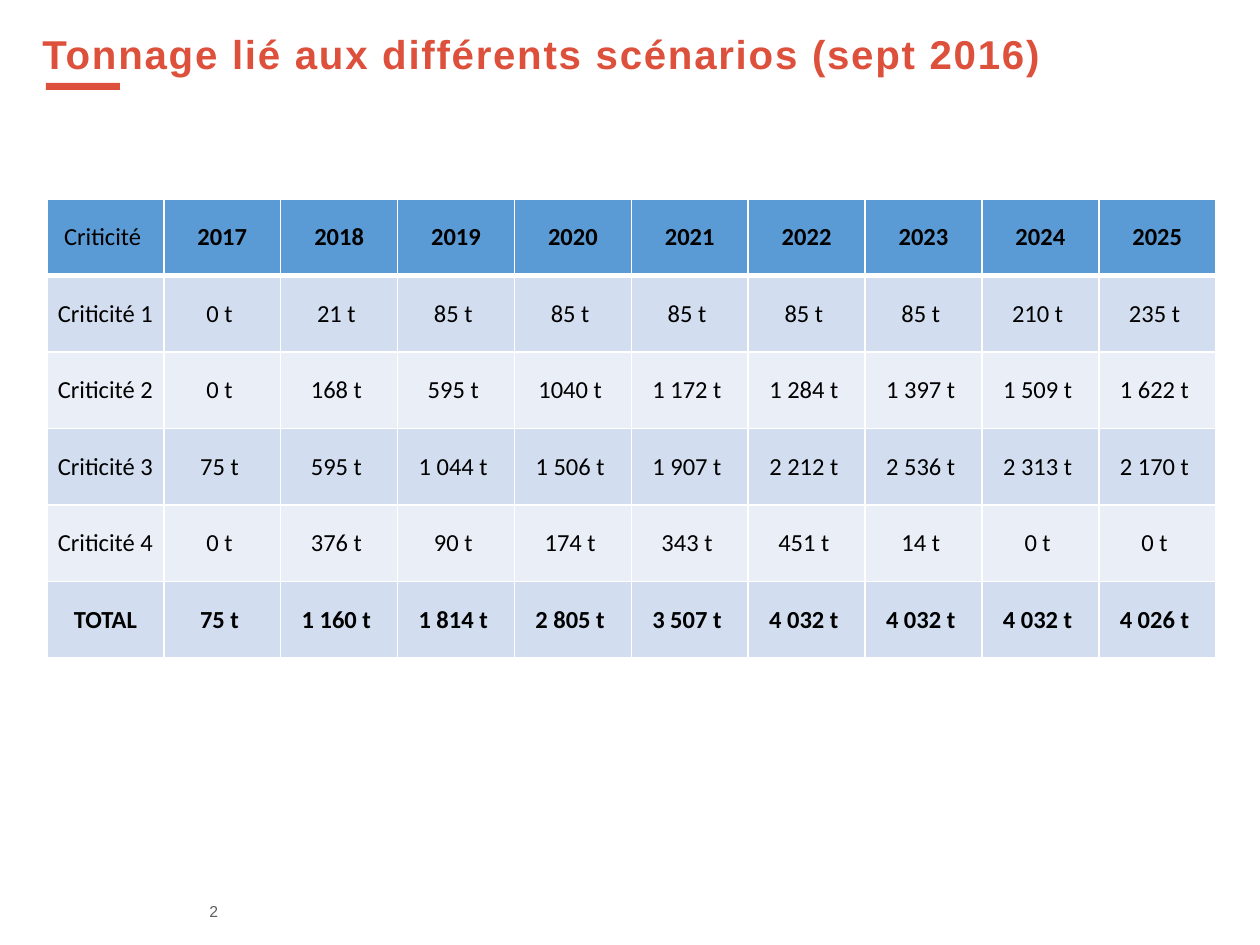
import lxml.etree
import pptx
import pptx.dml.color
import pptx.enum.shapes
import pptx.enum.text
import pptx.oxml.ns
import pptx.util

PX = 914400 // 126
MIDDLE = pptx.enum.text.MSO_ANCHOR.MIDDLE
TOP = pptx.enum.text.MSO_ANCHOR.TOP


def color(hex_value):
    return pptx.dml.color.RGBColor.from_string(hex_value)


class Deck:
    ACCENT, GREY, BLACK, WHITE = "DD503C", "5F5F5F", "000000", "FFFFFF"
    HEADER, BANDS = "5B9BD5", ("D2DEEF", "EAEFF7")

    def __init__(self, width, height):
        self.prs = pptx.Presentation()
        self.prs.slide_width, self.prs.slide_height = width * PX, height * PX
        self.slide = self.prs.slides.add_slide(self.prs.slide_layouts[6])

    def run(self, paragraph, text, size, fill, font="Arial", bold=False):
        run = paragraph.add_run()
        run.text = text
        run.font.name, run.font.size, run.font.bold = font, pptx.util.Pt(size), bold
        run.font.color.rgb = color(fill)
        return run

    def text(self, box, text, size, fill, bold=False, anchor=TOP, inset_y=0, line_spacing=1.0, tracking=0):
        frame = self.slide.shapes.add_textbox(*(v * PX for v in box)).text_frame
        frame.word_wrap, frame.vertical_anchor = True, anchor
        frame.margin_top = frame.margin_bottom = inset_y * PX
        paragraph = frame.paragraphs[0]
        paragraph.line_spacing = line_spacing
        run = self.run(paragraph, text, size, fill, bold=bold)
        if tracking:
            run.font._element.set("spc", str(tracking * 100))

    def bar(self, box, fill):
        kind = pptx.enum.shapes.MSO_SHAPE.RECTANGLE
        bar = self.slide.shapes.add_shape(kind, *(v * PX for v in box))
        bar.shadow.inherit = False
        bar.fill.solid()
        bar.fill.fore_color.rgb = color(fill)
        bar.line.fill.background()

    def borders(self, cell, widths):
        # Border lines must come before the fill in the cell properties
        properties = cell._tc.get_or_add_tcPr()
        for index, (side, width) in enumerate(widths.items()):
            line = lxml.etree.Element(pptx.oxml.ns.qn(f"a:ln{side}"), w=str(pptx.util.Pt(width)))
            solid = lxml.etree.SubElement(line, pptx.oxml.ns.qn("a:solidFill"))
            lxml.etree.SubElement(solid, pptx.oxml.ns.qn("a:srgbClr"), val=self.WHITE)
            properties.insert(index, line)

    def table(self, box, rows):
        left, top, width, height = (v * PX for v in box)
        table = self.slide.shapes.add_table(len(rows), len(rows[0]), left, top, width, height).table
        for column in table.columns:
            column.width = width // len(rows[0])
        for r, values in enumerate(rows):
            table.rows[r].height = height // len(rows)
            for c, value in enumerate(values):
                cell = table.cell(r, c)
                cell.margin_left = cell.margin_right = cell.margin_top = cell.margin_bottom = 0
                cell.vertical_anchor = MIDDLE
                cell.fill.solid()
                cell.fill.fore_color.rgb = color(self.BANDS[(r - 1) % 2] if r else self.HEADER)
                self.borders(cell, {"L": 1, "R": 1, "T": 3 if r == 1 else 1, "B": 1 if r else 3})
                paragraph = cell.text_frame.paragraphs[0]
                paragraph.alignment = pptx.enum.text.PP_ALIGN.CENTER
                bold = r == len(rows) - 1 or (r == 0 and c > 0)
                self.run(paragraph, value, 14, self.BLACK, "Calibri", bold)


# Tonnages by criticality, 2017 to 2025
TONNAGES = {
    "Criticité 1": ["0", "21", "85", "85", "85", "85", "85", "210", "235"],
    "Criticité 2": ["0", "168", "595", "1040", "1 172", "1 284", "1 397", "1 509", "1 622"],
    "Criticité 3": ["75", "595", "1 044", "1 506", "1 907", "2 212", "2 536", "2 313", "2 170"],
    "Criticité 4": ["0", "376", "90", "174", "343", "451", "14", "0", "0"],
    "TOTAL": ["75", "1 160", "1 814", "2 805", "3 507", "4 032", "4 032", "4 032", "4 026"],
}


def main():
    deck = Deck(1260, 945)

    # Page number
    deck.text((197, 900, 47, 23), "2", 9, deck.GREY, anchor=MIDDLE)

    # Title and its underline
    deck.text((30, 25, 1087, 91), "Tonnage lié aux différents scénarios (sept 2016)", 23, deck.ACCENT,
              bold=True, inset_y=10, line_spacing=0.9, tracking=1)
    deck.bar((46, 83, 74, 7), deck.ACCENT)

    # Tonnage table
    header = ["Criticité "] + [str(year) for year in range(2017, 2026)]
    body = [[label] + [f"{value} t " for value in values] for label, values in TONNAGES.items()]
    deck.table((47, 199, 1169, 459), [header] + body)

    deck.prs.save("out.pptx")


if __name__ == "__main__":
    main()
